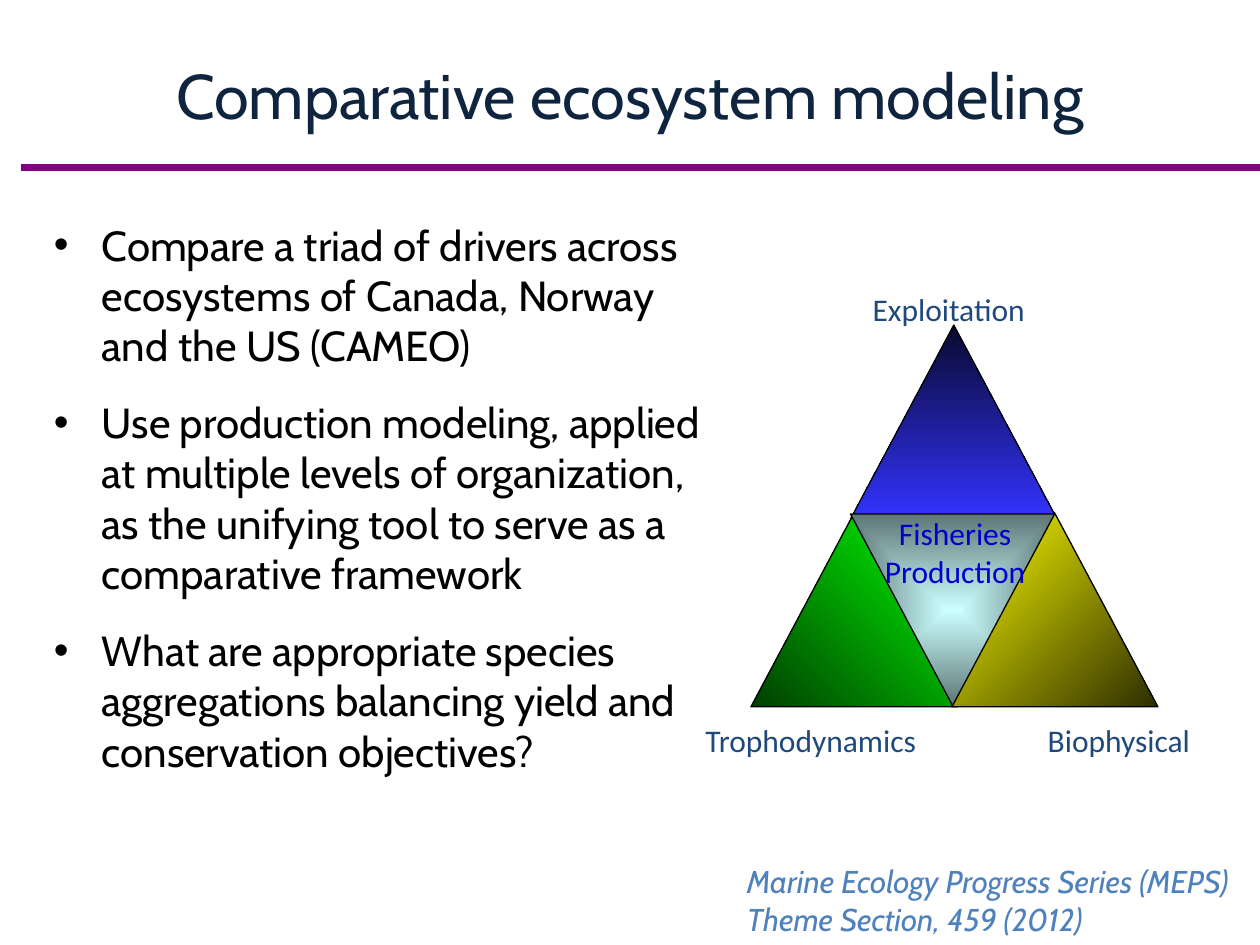
from pptx import Presentation
from pptx.dml.color import RGBColor
from pptx.enum.shapes import MSO_CONNECTOR as Conn, MSO_SHAPE as Shape
from pptx.enum.text import MSO_ANCHOR as Anchor, PP_ALIGN as Align
from pptx.oxml import parse_xml
from pptx.oxml.ns import nsdecls
from pptx.util import Inches, Pt

# Content
TITLE = "Comparative ecosystem modeling"
POINTS = [
    "Compare a triad of drivers across ecosystems of Canada, Norway and the US (CAMEO)",
    "Use production modeling, applied at multiple levels of organization, "
    "as the unifying tool to serve as a comparative framework",
    "What are appropriate species aggregations balancing yield and conservation objectives?",
]
SOURCE = "Marine Ecology Progress Series (MEPS) Theme Section, 459 (2012)"
# Outer triangles: left, top, gradient colours, clockwise angle
DRIVERS = [
    (6.75, 2.58, ("09092E", "3333FF"), 90),
    (5.96, 4.07, ("003E00", "00FF00"), 315),
    (7.55, 4.07, ("FFFF00", "2E2E00"), 45),
]
# Labels: text, left, top, width, height, colour
LABELS = [
    ("Trophodynamics", 5.42, 5.67, 2.03, 0.4, "1F497D"),
    ("Fisheries Production", 6.82, 4.03, 1.52, 0.76, "0000CC"),
    ("Exploitation", 6.75, 2.25, 1.56, 0.4, "1F497D"),
    ("Biophysical", 8.09, 5.67, 1.58, 0.4, "1F497D"),
]

deck = Presentation()
deck.slide_width, deck.slide_height = Inches(10), Inches(7.5)
slide = deck.slides.add_slide(deck.slide_layouts[6])
shapes = slide.shapes


def color(code):
    return RGBColor.from_string(code)


def add_text(lines, box, size, font, tint, align=Align.LEFT, anchor=Anchor.TOP,
             italic=False, bullet=False):
    frame = shapes.add_textbox(*map(Inches, box)).text_frame
    frame.word_wrap = True
    frame.vertical_anchor = anchor
    for i, line in enumerate(lines):
        para = frame.add_paragraph() if i else frame.paragraphs[0]
        para.alignment = align
        if bullet:
            props = para._p.get_or_add_pPr()
            props.set("marL", str(Inches(0.38)))
            props.set("indent", str(-Inches(0.38)))
            props.append(parse_xml(f'<a:buFont {nsdecls("a")} typeface="Arial"/>'))
            props.append(parse_xml(f'<a:buChar {nsdecls("a")} char="•"/>'))
        if i:
            para.space_before = Pt(15)
        run = para.add_run()
        run.text = line
        run.font.size, run.font.name = Pt(size), font
        run.font.italic = italic
        run.font.color.rgb = color(tint)


def add_tri(left, top, width, height, tints, angle=0):
    tri = shapes.add_shape(Shape.ISOSCELES_TRIANGLE,
                           *map(Inches, (left, top, width, height)))
    tri.shadow.inherit = False
    tri.line.color.rgb = color("000000")
    tri.line.width = Pt(0.75)
    tri.fill.gradient()
    tri.fill.gradient_angle = (360 - angle) % 360
    for stop, tint in zip(tri.fill.gradient_stops, tints):
        stop.color.rgb = color(tint)
    return tri


# Title and rule
add_text([TITLE], (0.5, 0.25, 9, 1), 36, "Cabin", "0F243E", Align.CENTER, Anchor.MIDDLE)
rule = shapes.add_connector(Conn.STRAIGHT, Inches(0.17), Inches(1.33),
                            Inches(10), Inches(1.33))
rule.line.color.rgb = color("800080")
rule.line.width = Pt(4)
rule._element.spPr.append(parse_xml(f'<a:effectLst {nsdecls("a")}/>'))

# Bullet points
add_text(POINTS, (0.33, 1.69, 5.33, 5.56), 24, "Cabin", "000000", bullet=True)

# Triad of drivers around the inverted centre
for left, top, tints, angle in DRIVERS:
    add_tri(left, top, 1.64, 1.54, tints, angle)
core = add_tri(6.75, 4.08, 1.62, 1.52, ("CCFFFF", "5E7676"))
core.rotation = 180
lin = core._element.spPr.xpath("a:gradFill/a:lin")[0]
lin.getparent().replace(lin, parse_xml(
    f'<a:path {nsdecls("a")} path="shape">'
    '<a:fillToRect l="50000" t="50000" r="50000" b="50000"/></a:path>'))

# Labels and source
for text, *box, tint in LABELS:
    add_text([text], box, 18, "Calibri", tint, Align.CENTER)
add_text([SOURCE], (5.83, 6.79, 4.33, 0.71), 18, "Cabin", "4F81BD", italic=True)

deck.save("out.pptx")
